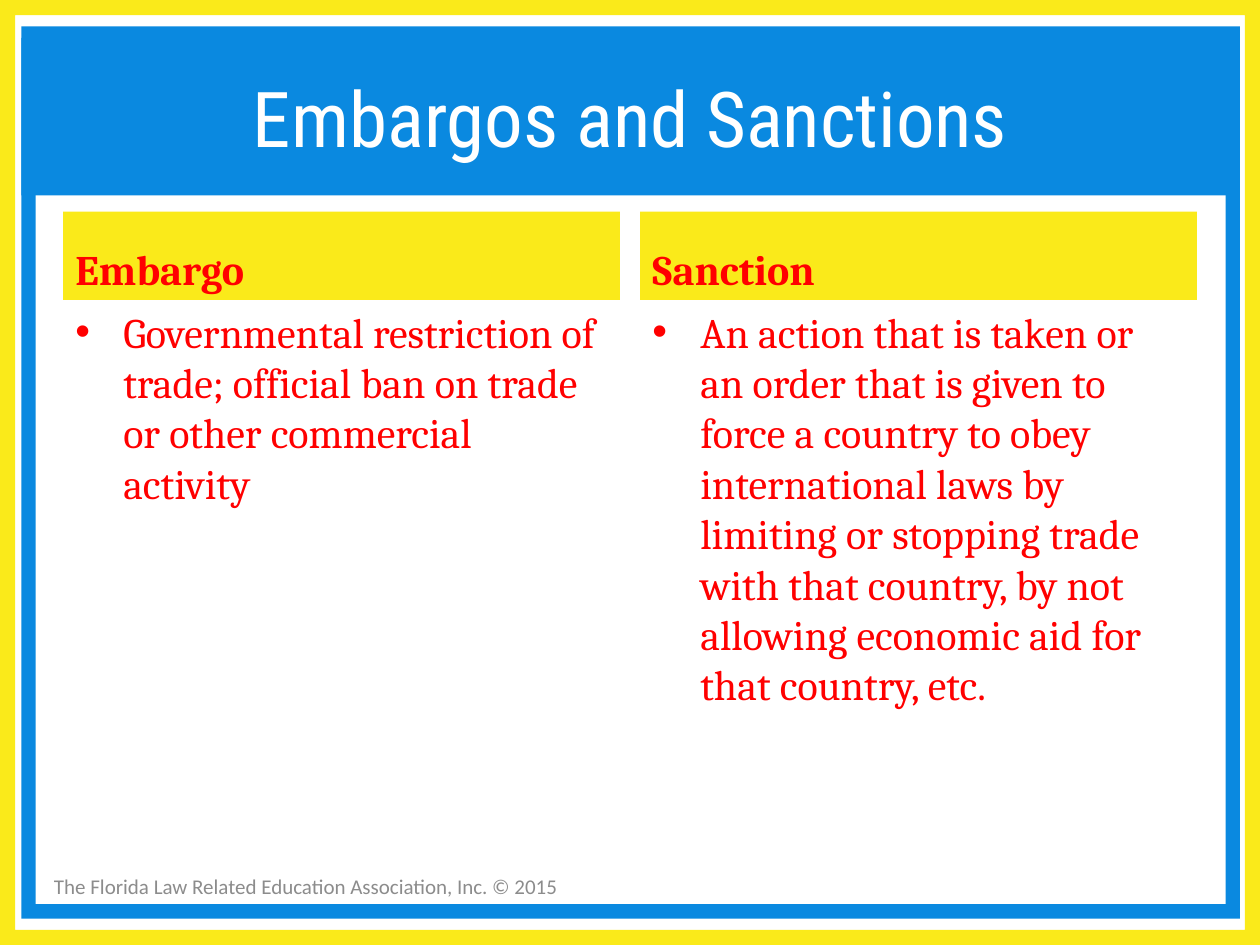
import pptx
import pptx.util
import pptx.dml.color
import pptx.enum.shapes
import pptx.enum.text
from lxml import etree

Inches = pptx.util.Inches
Pt = pptx.util.Pt
SHAPE = pptx.enum.shapes.MSO_SHAPE
ANCHOR = pptx.enum.text.MSO_ANCHOR
ALIGN = pptx.enum.text.PP_ALIGN

YELLOW, BLUE, RED, WHITE, GREY = "FAEA1A", "0A89E0", "FF0000", "FFFFFF", "8C8C8C"
BODY_FONT = "Cambria"

COLUMNS = [
    ("Embargo", "Governmental restriction of trade; official ban on trade "
                "or other commercial activity"),
    ("Sanction", "An action that is taken or an order that is given to force a "
                 "country to obey international laws by limiting or stopping "
                 "trade with that country, by not allowing economic aid for "
                 "that country, etc."),
]


def color(value):
    """Turn a hex string into a colour."""
    return pptx.dml.color.RGBColor.from_string(value)


def add_filled(page, kind, area, fill):
    """Add a flat shape without outline or shadow."""
    shape = page.shapes.add_shape(kind, *map(Inches, area))
    shape.shadow.inherit = False
    shape.fill.solid()
    shape.fill.fore_color.rgb = color(fill)
    shape.line.fill.background()
    return shape


def add_text_box(page, area):
    """Add an empty text box."""
    return page.shapes.add_textbox(*map(Inches, area))


def write(box, text, size, font, ink, anchor, align=ALIGN.LEFT, bold=False):
    """Fill a box with one formatted paragraph and return it."""
    frame = box.text_frame
    frame.word_wrap = True
    frame.vertical_anchor = anchor
    frame.text = text
    para = frame.paragraphs[0]
    para.alignment = align
    for span in para.runs:
        span.font.size = Pt(size)
        span.font.name = font
        span.font.bold = bold
        span.font.color.rgb = color(ink)
    return para


def add_bullet(para, indent):
    """Give a paragraph a round bullet and a hanging indent."""
    props = para._p.get_or_add_pPr()
    props.set("marL", str(Inches(indent)))
    props.set("indent", str(-Inches(indent)))
    for tag, name, value in (("buFont", "typeface", "Arial"), ("buChar", "char", "•")):
        etree.SubElement(props, pptx.oxml.ns.qn("a:" + tag)).set(name, value)


def add_border(page, area, fill):
    """Draw a thin frame around an area."""
    frame = add_filled(page, SHAPE.FRAME, area, fill)
    frame.adjustments[0] = 0.016


def add_footer(page, area):
    """Write the copyright line."""
    write(add_text_box(page, area),
          "The Florida Law Related Education Association, Inc. © 2015",
          12, "Calibri", GREY, ANCHOR.MIDDLE)


def add_title(page, area):
    """Draw the title band."""
    band = add_filled(page, SHAPE.RECTANGLE, area, BLUE)
    write(band, "Embargos and Sanctions", 44, "Roboto Condensed", WHITE,
          ANCHOR.MIDDLE, ALIGN.CENTER)


def add_column(page, area, term, meaning):
    """Place a term heading above its bulleted definition."""
    left, top, width, height = area
    heading_height = 0.7
    heading = add_filled(page, SHAPE.RECTANGLE, (left, top, width, heading_height), YELLOW)
    write(heading, term, 24, BODY_FONT, RED, ANCHOR.BOTTOM, bold=True)
    body = add_text_box(
        page, (left, top + heading_height, width, height - heading_height))
    para = write(body, meaning, 24, BODY_FONT, RED, ANCHOR.TOP)
    add_bullet(para, 0.38)


def add_columns(page, area, gap):
    """Share an area equally between the columns."""
    left, top, width, height = area
    column_width = (width - gap * (len(COLUMNS) - 1)) / len(COLUMNS)
    for index, (term, meaning) in enumerate(COLUMNS):
        column_left = left + index * (column_width + gap)
        add_column(page, (column_left, top, column_width, height), term, meaning)


def main():
    """Build and save the deck."""
    deck = pptx.Presentation()
    deck.slide_width, deck.slide_height = Inches(10), Inches(7.5)
    page = deck.slides.add_slide(deck.slide_layouts[6])
    add_footer(page, (0.33, 6.83, 4.25, 0.4))
    add_border(page, (0, 0, 10, 7.5), YELLOW)
    add_border(page, (0.17, 0.21, 9.67, 7.08), BLUE)
    add_title(page, (0.17, 0.3, 9.67, 1.25))
    add_columns(page, (0.5, 1.68, 9, 5.02), 0.16)
    deck.save("out.pptx")


if __name__ == "__main__":
    main()
